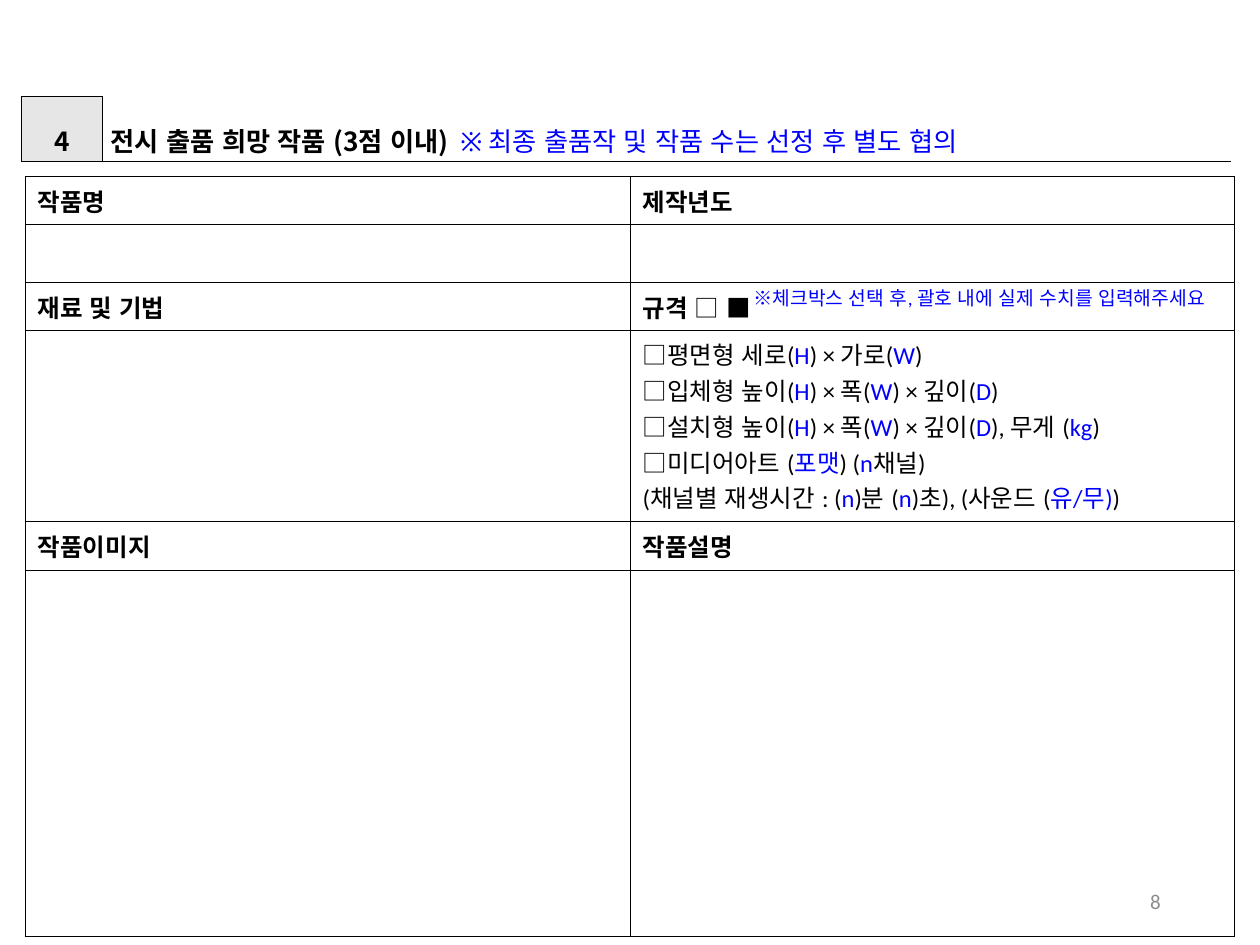
"""Build the exhibition entry form slide with its heading, form table and hint."""
from lxml.etree import SubElement
from pptx import Presentation
from pptx.dml.color import RGBColor
from pptx.enum.lang import MSO_LANGUAGE_ID
from pptx.enum.text import MSO_ANCHOR, PP_ALIGN
from pptx.oxml.ns import qn
from pptx.util import Inches, Pt

COLORS = {"ink": "000000", "blue": "0000FF", "badge": "E7E6E6", "number": "8C8C8C"}
SIDES = {"left": "a:lnL", "right": "a:lnR", "top": "a:lnT", "bottom": "a:lnB"}

deck = Presentation()
deck.slide_width, deck.slide_height = Inches(10), Inches(7.5)
page = deck.slides.add_slide(deck.slide_layouts[6])
unit = deck.slide_width // 100


def write(frame, lines, color="ink", paragraph_format=None, **font):
    """Write lines of (text, overrides) spans."""
    defaults = {"name": "Calibri", "language_id": MSO_LANGUAGE_ID.KOREAN, "color": color}
    for index, line in enumerate(lines):
        para = frame.add_paragraph() if index else frame.paragraphs[0]
        for name, value in (paragraph_format or {}).items():
            setattr(para, name, value)
        for text, overrides in line:
            span = para.add_run()
            span.text = text
            values = {**defaults, **font, **overrides}
            span.font.color.rgb = RGBColor.from_string(COLORS[values.pop("color")])
            for name, value in values.items():
                setattr(span.font, name, value)


def add_grid(left, top, columns, rows, width, open_sides):
    """Add an unfilled table, ruled except on the open sides of a column."""
    table = page.shapes.add_table(
        len(rows), len(columns), int(left * unit), int(top * unit),
        int(sum(columns) * unit), int(sum(rows) * unit)).table
    table.first_row = table.horz_banding = False
    for column, share in zip(table.columns, columns):
        column.width = int(share * unit)
    for row, share in zip(table.rows, rows):
        row.height = int(share * unit)
        for index, cell in enumerate(row.cells):
            properties = cell._tc.get_or_add_tcPr()
            for side, tag in SIDES.items():
                edge = SubElement(properties, qn(tag), w=str(Pt(width)))
                if side in open_sides.get(index, ()):
                    SubElement(edge, qn("a:noFill"))
                else:
                    fill = SubElement(edge, qn("a:solidFill"))
                    SubElement(fill, qn("a:srgbClr"), val=COLORS["ink"])
            cell.fill.background()
    return table


blue = {"color": "blue"}

number_box = page.shapes.add_textbox(
    int(70.6 * unit), int(69.5 * unit), int(22.5 * unit), 4 * unit)
number_box.text_frame.word_wrap = True
number_box.text_frame.vertical_anchor = MSO_ANCHOR.MIDDLE
write(number_box.text_frame, [[("8", {})]], "number",
      {"alignment": PP_ALIGN.RIGHT}, size=Pt(12))

heading = add_grid(1.7, 7.6, [6.4, 89.6], [5.2], 0.25, {1: ("top", "right")})
heading_spans = [
    (PP_ALIGN.CENTER, [("4", {})]),
    (PP_ALIGN.JUSTIFY, [
        ("전시 출품 희망 작품 (3점 이내)  ", {}),
        ("※ 최종 출품작 및 작품 수는 선정 후 별도 협의",
         {"name": "Calibri", "bold": False, **blue})]),
]
cell_format = {
    "vertical_anchor": MSO_ANCHOR.MIDDLE,
    "margin_left": Inches(0.07), "margin_right": Inches(0.07),
    "margin_top": Inches(0.02), "margin_bottom": Inches(0.02),
}
for cell, (alignment, spans) in zip(heading.rows[0].cells, heading_spans):
    for name, value in cell_format.items():
        setattr(cell, name, value)
    write(cell.text_frame, [spans],
          paragraph_format={"alignment": alignment, "line_spacing": 1.6},
          name="Noto Sans CJK KR", size=Pt(15), bold=True)
badge = heading.cell(0, 0)
badge.fill.solid()
badge.fill.fore_color.rgb = RGBColor.from_string(COLORS["badge"])

form = add_grid(2, 14, [48, 48], [3.8, 4.6, 3.8, 15.2, 3.9, 29], 0.5, {})
labels = [
    ("작품명", "제작년도"),
    ("재료 및 기법", "규격 "),
    ("작품이미지", "작품설명"),
]
for index, pair in enumerate(labels):
    for cell, label in zip(form.rows[2 * index].cells, pair):
        write(cell.text_frame, [[(label, {})]], size=Pt(14), bold=True)
write(form.cell(2, 1).text_frame, [[("□ ■", {})]], size=Pt(14), bold=False)

sizes = [
    "□평면형 세로(|H|) × 가로(|W|)",
    "□입체형 높이(|H|) × 폭(|W|) × 깊이(|D|)",
    "□설치형 높이(|H|) × 폭(|W|) × 깊이(|D|), 무게 (|kg|)",
    "□미디어아트 (|포맷|) (|n|채널)",
    "(채널별 재생시간 : (|n|)분 (|n|)초), (사운드 (|유/무)|)",
]
size_lines = [[(part, blue if index % 2 else {})
               for index, part in enumerate(line.split("|"))] for line in sizes]
write(form.cell(3, 1).text_frame, size_lines, size=Pt(14), bold=False)

hint_box = page.shapes.add_textbox(
    int(58.8 * unit), int(22.2 * unit), int(40.2 * unit), int(2.9 * unit))
hint_box.text_frame.word_wrap = True
write(hint_box.text_frame,
      [[("※체크박스 선택 후, 괄호 내에 실제 수치를 입력해주세요", {})]],
      "blue", size=Pt(11))

deck.save("out.pptx")
